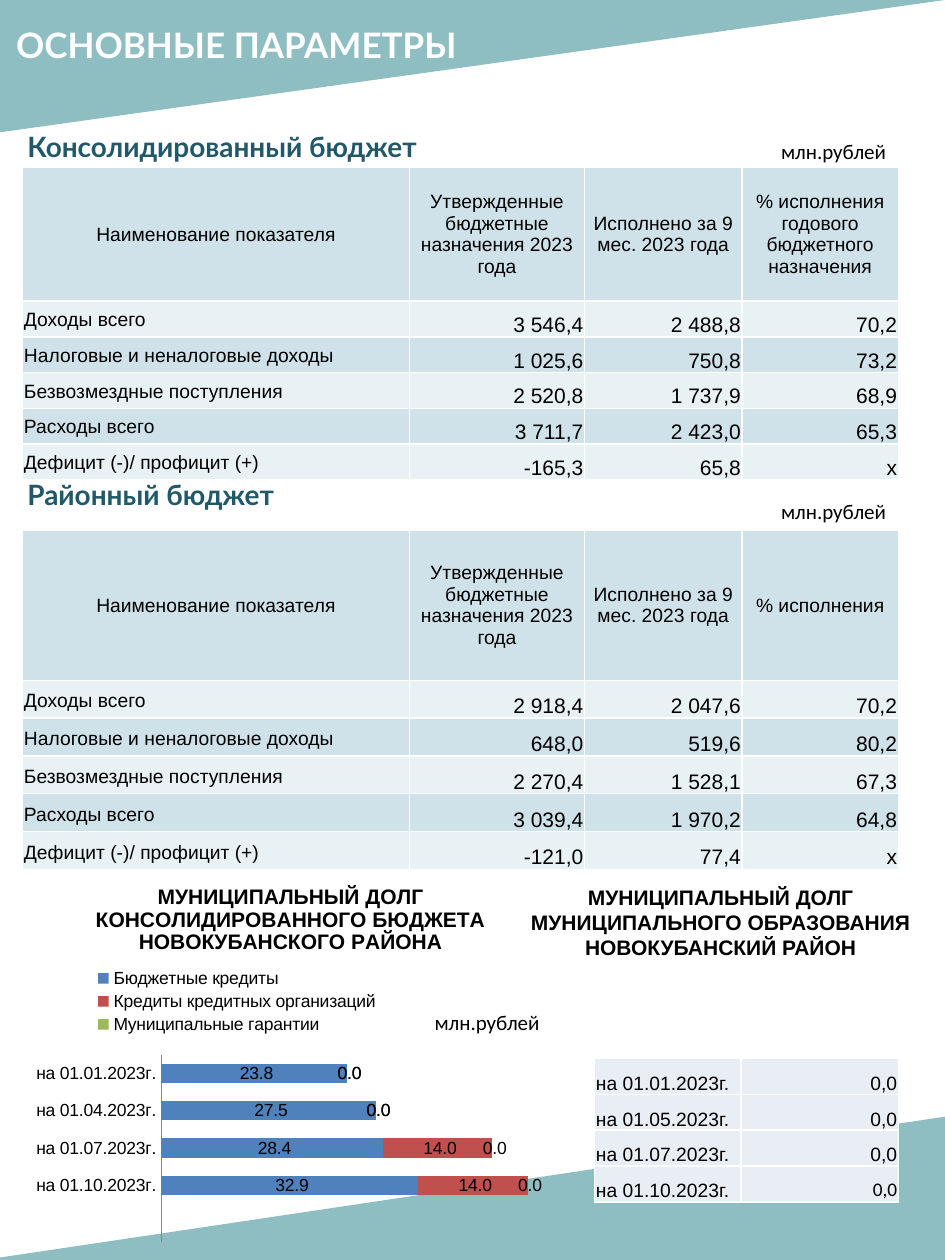
from lxml.etree import SubElement
from pptx import Presentation
from pptx.chart.data import CategoryChartData
from pptx.dml.color import RGBColor
from pptx.enum.chart import XL_CHART_TYPE, XL_LABEL_POSITION, XL_LEGEND_POSITION, XL_TICK_MARK
from pptx.enum.shapes import MSO_SHAPE
from pptx.enum.text import MSO_ANCHOR, MSO_AUTO_SIZE, PP_ALIGN
from pptx.oxml import parse_xml
from pptx.oxml.ns import nsdecls, qn
from pptx.util import Inches, Pt

COLORS = {
    "teal": "519AA0", "heading": "215968", "white": "FFFFFF", "black": "000000",
    "dark_row": "CFE2EA", "light_row": "E8F1F4", "debt_row": "E9EDF4",
    "loans": "4F81BD", "banks": "C0504D", "guarantees": "9BBB59", "axis": "868686",
}
NUMBER_FORMAT = "#\\ ##0.0"
TEXT_INSETS = (0.01, 0.05, 0.01, 0.05)
VALUE_INSETS = (0.01, 0.01, 0.01, 0)
UNIT = "млн.рублей"
ROW_NAMES = [
    "Доходы всего", "Налоговые и неналоговые доходы", "Безвозмездные поступления",
    "Расходы всего", "Дефицит (-)/ профицит (+)",
]
HEADERS = [
    "Наименование показателя", "Утвержденные бюджетные назначения 2023 года",
    "Исполнено за 9 мес. 2023 года",
]
CONSOLIDATED = [
    ("3 546,4", "2 488,8", "70,2"), ("1 025,6", "750,8", "73,2"),
    ("2 520,8", "1 737,9", "68,9"), ("3 711,7", "2 423,0", "65,3"),
    ("-165,3", "65,8", "х"),
]
DISTRICT = [
    ("2 918,4", "2 047,6", "70,2"), ("648,0", "519,6", "80,2"),
    ("2 270,4", "1 528,1", "67,3"), ("3 039,4", "1 970,2", "64,8"),
    ("-121,0", "77,4", "х"),
]


def color(name):
    return RGBColor.from_string(COLORS[name])


class SlideBuilder:
    def __init__(self, slide):
        self.slide = slide

    def run(self, paragraph, text, size, font="Arial", fill="black", bold=False):
        run = paragraph.add_run()
        run.text = text
        run.font.size = Pt(size)
        run.font.name = font
        run.font.bold = bold
        run.font.color.rgb = color(fill)

    def triangle(self, left, top, width, height, flip):
        shape = self.slide.shapes.add_shape(
            MSO_SHAPE.RIGHT_TRIANGLE, Inches(left), Inches(top), Inches(width), Inches(height))
        shape.shadow.inherit = False
        shape.fill.solid()
        shape.fill.fore_color.rgb = color("teal")
        shape.line.fill.background()
        shape.rotation = 180
        shape.element.spPr.find(qn("a:xfrm")).set(flip, "1")
        fill = next(shape.element.spPr.iter(qn("a:srgbClr")))
        SubElement(fill, qn("a:alpha")).set("val", "64000")

    def text(self, left, top, width, height, text, size, font, fill="black",
             bold=False, align=PP_ALIGN.LEFT, wrap=True):
        box = self.slide.shapes.add_textbox(
            Inches(left), Inches(top), Inches(width), Inches(height))
        box.text_frame.word_wrap = wrap
        if not wrap:
            box.text_frame.auto_size = MSO_AUTO_SIZE.SHAPE_TO_FIT_TEXT
        paragraph = box.text_frame.paragraphs[0]
        paragraph.alignment = align
        self.run(paragraph, text, size, font, fill, bold)

    def cell(self, cell, text, size, fill, align, anchor, insets, font="Arial"):
        cell.margin_left, cell.margin_top, cell.margin_right, cell.margin_bottom = map(Inches, insets)
        cell.vertical_anchor = anchor
        cell.fill.solid()
        cell.fill.fore_color.rgb = color(fill)
        paragraph = cell.text_frame.paragraphs[0]
        paragraph.alignment = align
        self.run(paragraph, text, size, font)
        properties = cell._tc.get_or_add_tcPr()
        for index, side in enumerate("LRTB"):
            properties.insert(index, parse_xml(
                f'<a:ln{side} {nsdecls("a")} w="12700"><a:solidFill>'
                f'<a:srgbClr val="{COLORS["white"]}"/></a:solidFill></a:ln{side}>'))

    def table(self, left, top, widths, heights):
        frame = self.slide.shapes.add_table(
            len(heights), len(widths), Inches(left), Inches(top),
            Inches(sum(widths)), Inches(sum(heights)))
        table = frame.table
        table.first_row = table.horz_banding = False
        for column, width in zip(table.columns, widths):
            column.width = Inches(width)
        for row, height in zip(table.rows, heights):
            row.height = Inches(height)
        return table

    def budget_table(self, top, header_height, row_height, last_header, values):
        table = self.table(0.18, top, [3.07, 1.39, 1.25, 1.24],
                           [header_height] + [row_height] * len(values))
        for index, header in enumerate(HEADERS + [last_header]):
            self.cell(table.cell(0, index), header, 11, "dark_row",
                      PP_ALIGN.CENTER, MSO_ANCHOR.MIDDLE, TEXT_INSETS)
        for row, (name, numbers) in enumerate(zip(ROW_NAMES, values), 1):
            fill = "light_row" if row % 2 else "dark_row"
            self.cell(table.cell(row, 0), name, 11, fill,
                      PP_ALIGN.LEFT, MSO_ANCHOR.BOTTOM, TEXT_INSETS)
            for column, number in enumerate(numbers, 1):
                self.cell(table.cell(row, column), number, 12, fill,
                          PP_ALIGN.RIGHT, MSO_ANCHOR.BOTTOM, VALUE_INSETS)

    def debt_table(self, left, top, dates):
        table = self.table(left, top, [1.16, 1.25], [1.14 / len(dates)] * len(dates))
        for row, date in enumerate(dates):
            font = "Calibri" if row == len(dates) - 1 else "Arial"
            self.cell(table.cell(row, 0), date, 11, "debt_row",
                      PP_ALIGN.LEFT, MSO_ANCHOR.BOTTOM, VALUE_INSETS)
            self.cell(table.cell(row, 1), "0,0", 11, "debt_row",
                      PP_ALIGN.RIGHT, MSO_ANCHOR.BOTTOM, VALUE_INSETS, font)

    def place(self, element, index, target="", **position):
        for layout in element.findall(qn("c:layout")):
            element.remove(layout)
        layout = parse_xml(f'<c:layout {nsdecls("c")}><c:manualLayout/></c:layout>')
        entries = [("layoutTarget", target)] if target else []
        entries += [("xMode", "edge"), ("yMode", "edge"), *position.items()]
        for name, value in entries:
            SubElement(layout[0], qn(f"c:{name}")).set("val", str(value))
        element.insert(index, layout)

    def debt_chart(self, left, top, width, height, title, categories, series):
        data = CategoryChartData(number_format=NUMBER_FORMAT)
        data.categories = categories
        for name, values, fill in series:
            data.add_series(name, values)
        chart = self.slide.shapes.add_chart(
            XL_CHART_TYPE.BAR_STACKED, Inches(left), Inches(top),
            Inches(width), Inches(height), data).chart
        chart.font.size = Pt(10)
        chart.font.name = "Arial"
        chart.font.color.rgb = color("black")
        self.run(chart.chart_title.text_frame.paragraphs[0], title, 12, bold=True)
        chart.chart_title.include_in_layout = False
        chart.has_legend = True
        chart.legend.position = XL_LEGEND_POSITION.TOP
        chart.legend.include_in_layout = False
        plot = chart.plots[0]
        plot.gap_width = 95
        plot.overlap = 100
        plot.vary_by_categories = False
        for item, (name, values, fill) in zip(plot.series, series):
            item.format.fill.solid()
            item.format.fill.fore_color.rgb = color(fill)
            labels = item.data_labels
            labels.show_value = True
            labels.number_format = NUMBER_FORMAT
            labels.number_format_is_linked = False
            labels.position = XL_LABEL_POSITION.CENTER
        axis = chart.category_axis
        axis.reverse_order = True
        axis.major_tick_mark = axis.minor_tick_mark = XL_TICK_MARK.NONE
        axis.format.line.color.rgb = color("axis")
        chart.value_axis.visible = False
        chart.value_axis.has_major_gridlines = False
        chart.value_axis.minimum_scale = 0
        chart.value_axis.maximum_scale = 50
        root = chart.element.chart
        self.place(root.find(qn("c:title")), 1, x=0.14, y=0.15)
        self.place(root.find(qn("c:legend")), 1, x=0.12, y=0.35, w=0.5, h=0.17)
        self.place(root.plotArea, 0, "inner", x=0.25, y=0.56, w=0.62, h=0.44)


def main():
    presentation = Presentation()
    presentation.slide_width = Inches(7.5)
    presentation.slide_height = Inches(10)
    builder = SlideBuilder(presentation.slides.add_slide(presentation.slide_layouts[6]))
    builder.triangle(0, 0, 7.5, 1.05, "flipH")
    builder.triangle(-0.13, 8.86, 7.65, 1.14, "flipV")
    builder.text(0.03, 0.14, 4.87, 0.43, "ОСНОВНЫЕ ПАРАМЕТРЫ", 20, "Lato", "white", True)
    for top, heading in [(0.98, "Консолидированный бюджет"), (3.74, "Районный бюджет")]:
        builder.text(0.12, top, 4.87, 0.36, heading, 16, "Lato", "heading", True)
    for left, top in [(6.1, 1.05), (6.1, 3.91), (3.35, 7.96)]:
        builder.text(left, top, 1.05, 0.3, UNIT, 12, "Calibri", wrap=False)
    builder.budget_table(1.33, 1.06, 0.28, "% исполнения годового бюджетного назначения", CONSOLIDATED)
    builder.budget_table(4.21, 1.19, 0.3, "% исполнения", DISTRICT)
    builder.text(3.86, 6.97, 3.72, 0.91,
                 "МУНИЦИПАЛЬНЫЙ ДОЛГ МУНИЦИПАЛЬНОГО ОБРАЗОВАНИЯ НОВОКУБАНСКИЙ РАЙОН",
                 12, "Arial", bold=True, align=PP_ALIGN.CENTER)
    builder.debt_table(4.72, 8.4, [f"на 01.{month}.2023г." for month in ("01", "05", "07", "10")])
    builder.debt_chart(
        0.03, 6.48, 5, 3.38, "МУНИЦИПАЛЬНЫЙ ДОЛГ КОНСОЛИДИРОВАННОГО БЮДЖЕТА НОВОКУБАНСКОГО РАЙОНА",
        [f"на 01.{month}.2023г." for month in ("01", "04", "07", "10")] + [""],
        [("Бюджетные кредиты", (23.8, 27.5, 28.4, 32.9, None), "loans"),
         ("Кредиты кредитных организаций", (0, 0, 14, 14, None), "banks"),
         ("Муниципальные гарантии", (0, 0, 0, 0, None), "guarantees")])
    presentation.save("out.pptx")


if __name__ == "__main__":
    main()
